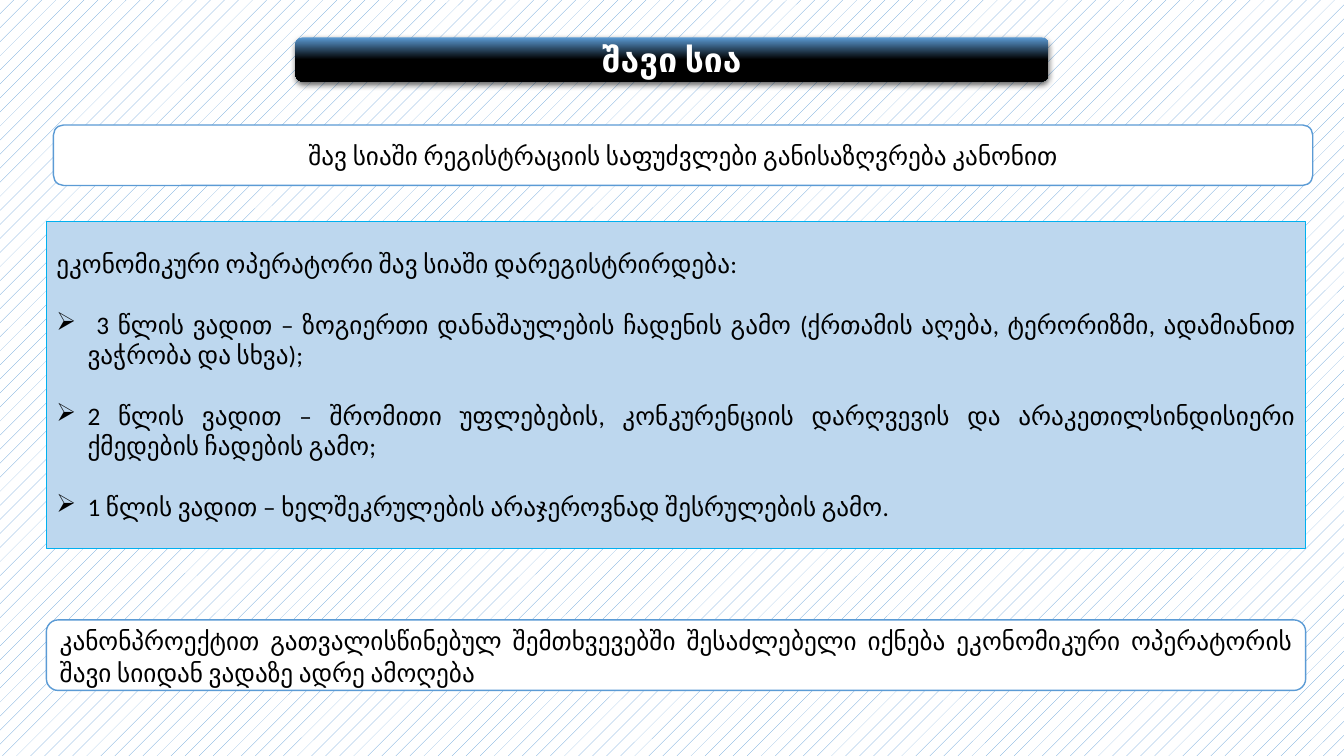
from dataclasses import dataclass

from lxml.etree import SubElement
from pptx import Presentation
from pptx.dml.color import RGBColor as RGB
from pptx.enum.dml import MSO_PATTERN as PATTERN
from pptx.enum.shapes import MSO_SHAPE as SHAPE
from pptx.enum.text import MSO_ANCHOR as ANCHOR, PP_ALIGN as ALIGN
from pptx.oxml.ns import qn
from pptx.util import Inches, Pt

# Content
TITLE = "შავი სია"
BASIS = "შავ სიაში რეგისტრაციის საფუძვლები განისაზღვრება კანონით"
INTRO = "ეკონომიკური ოპერატორი შავ სიაში დარეგისტრირდება:"
TERMS = [
    " 3 წლის ვადით – ზოგიერთი დანაშაულების ჩადენის გამო (ქრთამის აღება, ტერორიზმი, ადამიანით ვაჭრობა და სხვა);",
    "2 წლის ვადით – შრომითი უფლებების, კონკურენციის დარღვევის და არაკეთილსინდისიერი ქმედების ჩადების გამო;",
    "1 წლის ვადით – ხელშეკრულების არაჯეროვნად შესრულების გამო.",
]
REMOVAL = "კანონპროექტით გათვალისწინებულ შემთხვევებში შესაძლებელი იქნება ეკონომიკური ოპერატორის შავი სიიდან ვადაზე ადრე ამოღება"


@dataclass(frozen=True)
class Theme:
    font: str = "Calibri"
    title_size: int = 24
    body_size: int = 18
    gap: int = 22
    blue: str = "5B9BD5"
    pale: str = "BDD7EE"
    cyan: str = "00B0F0"
    white: str = "FFFFFF"
    black: str = "000000"


T = Theme()

# Layout in inches
WIDTH, HEIGHT = 13.33, 7.5
LEFT, PANEL_W = 0.46, 12.49
TITLE_W = 7.47
INDENT = 0.31


def add_box(s, kind, x, y, w, h, fill=None, line=None):
    sp = s.shapes.add_shape(kind, Inches(x), Inches(y), Inches(w), Inches(h))
    sp.shadow.inherit = False
    if fill:
        sp.fill.solid()
        sp.fill.fore_color.rgb = RGB.from_string(fill)
    if line:
        sp.line.color.rgb = RGB.from_string(line)
        sp.line.width = Pt(1)
    else:
        sp.line.fill.background()
    sp.text_frame.word_wrap = True
    sp.text_frame.vertical_anchor = ANCHOR.MIDDLE
    return sp


def write(p, text, size=T.body_size, color=T.black, bold=False,
          align=ALIGN.JUSTIFY, before=0, spacing=None, bullet=None):
    p.alignment = align
    p.space_before = Pt(before)
    if spacing:
        p.line_spacing = spacing
    if bullet:
        pPr = p._p.get_or_add_pPr()
        pPr.set("marL", str(Inches(INDENT)))
        pPr.set("indent", str(-Inches(INDENT)))
        SubElement(pPr, qn("a:buChar"), char=bullet)
    r = p.add_run()
    r.text = text
    r.font.name = T.font
    r.font.size = Pt(size)
    r.font.bold = bold
    r.font.color.rgb = RGB.from_string(color)


def add_glossy_style(sp):
    sp.fill.gradient()
    sp.fill.gradient_angle = 270
    stops = zip(sp.fill.gradient_stops, ((0, T.blue), (0.5, T.black)))
    for stop, (position, color) in stops:
        stop.position = position
        stop.color.rgb = RGB.from_string(color)
    effects = sp._element.spPr.find(qn("a:effectLst"))
    shadow = SubElement(effects, qn("a:outerShdw"), blurRad=str(Pt(4.5)),
                        dist=str(Pt(1.5)), dir="5400000", rotWithShape="0")
    color = SubElement(shadow, qn("a:srgbClr"), val=T.black)
    SubElement(color, qn("a:alpha"), val="63000")


def main():
    prs = Presentation()
    prs.slide_width, prs.slide_height = Inches(WIDTH), Inches(HEIGHT)
    s = prs.slides.add_slide(prs.slide_layouts[6])

    # Patterned background
    bg = s.background.fill
    bg.patterned()
    bg.pattern = PATTERN.PERCENT_5
    bg.fore_color.rgb = RGB.from_string(T.blue)
    bg.back_color.rgb = RGB.from_string(T.white)

    # Title bar
    sp = add_box(s, SHAPE.ROUNDED_RECTANGLE, (WIDTH - TITLE_W) / 2, 0.37, TITLE_W, 0.44)
    add_glossy_style(sp)
    write(sp.text_frame.paragraphs[0], TITLE, size=T.title_size,
          color=T.white, bold=True, align=ALIGN.CENTER)

    # Registration terms
    sp = add_box(s, SHAPE.RECTANGLE, LEFT, 2.2, PANEL_W, 3.24, T.pale, T.cyan)
    tf = sp.text_frame
    write(tf.paragraphs[0], INTRO)
    for term in TERMS:
        write(tf.add_paragraph(), term, before=T.gap, bullet="➢")

    # Framed statements below and above the terms
    for text, x, y, h, style in (
        (REMOVAL, LEFT, 6.15, 0.7, {"spacing": 1.07}),
        (BASIS, LEFT + 0.07, 1.24, 0.6, {"align": ALIGN.CENTER}),
    ):
        sp = add_box(s, SHAPE.ROUNDED_RECTANGLE, x, y, PANEL_W, h, T.white, T.blue)
        write(sp.text_frame.paragraphs[0], text, **style)

    prs.save("out.pptx")


if __name__ == "__main__":
    main()
